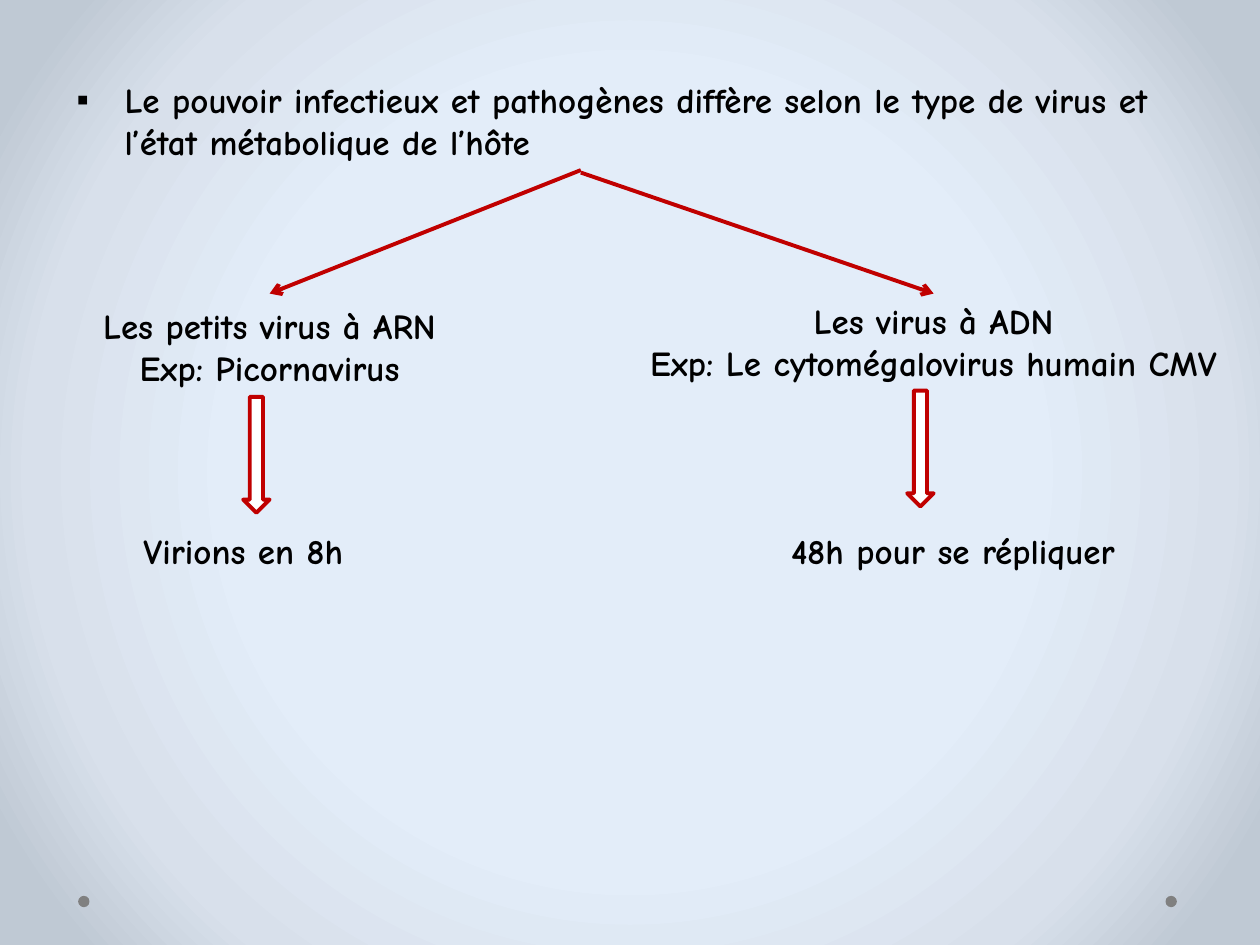
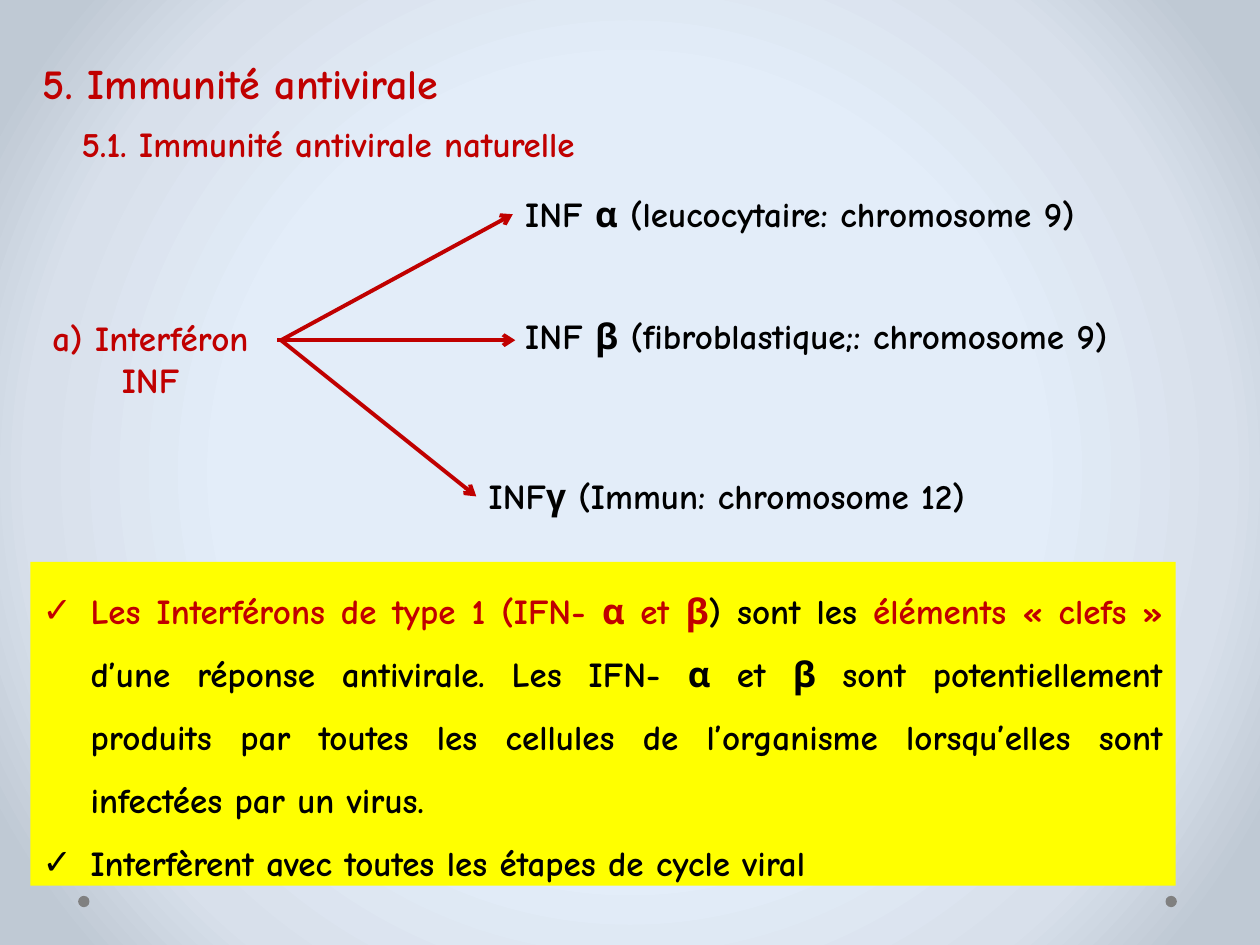
import dataclasses

import lxml.etree
import pptx
import pptx.dml.color
import pptx.enum.shapes
import pptx.enum.text
import pptx.oxml
import pptx.oxml.ns
import pptx.util

Inches = pptx.util.Inches
Pt = pptx.util.Pt
SHAPE = pptx.enum.shapes.MSO_SHAPE
ALIGN = pptx.enum.text.PP_ALIGN
ANCHOR = pptx.enum.text.MSO_ANCHOR
qn = pptx.oxml.ns.qn


@dataclasses.dataclass(frozen=True)
class Theme:
    font: str = "Comic Neue"
    head: int = 24
    body: int = 20
    line: float = 2.25
    red: str = "C00000"
    black: str = "000000"
    white: str = "FFFFFF"
    yellow: str = "FFFF00"
    grey: str = "808080"
    glow: tuple = ((50, "E3EDF9"), (76, "D8E0EB"), (92, "BFC9D4"))


THEME = Theme()


def rgb(code):
    return pptx.dml.color.RGBColor.from_string(code)


def paint_back(master):
    """Give the master a round gradient that spreads from the centre."""
    master.background.fill.gradient()
    grad = master.element.xpath("./p:cSld/p:bg//a:gradFill")[0]
    stops = "".join(
        f'<a:gs pos="{pos * 1000}"><a:srgbClr val="{code}"/></a:gs>'
        for pos, code in THEME.glow
    )
    new = pptx.oxml.parse_xml(
        f'<a:gradFill xmlns:a="{pptx.oxml.ns.namespaces("a")["a"]}" rotWithShape="1">'
        f'<a:gsLst>{stops}</a:gsLst><a:path path="circle">'
        '<a:fillToRect l="50000" t="50000" r="50000" b="50000"/>'
        "</a:path></a:gradFill>"
    )
    grad.getparent().replace(grad, new)


def add_form(slide, kind, box, fill, edge=None):
    form = slide.shapes.add_shape(kind, *map(Inches, box))
    form.shadow.inherit = False
    form.fill.solid()
    form.fill.fore_color.rgb = rgb(fill)
    if edge:
        form.line.color.rgb = rgb(edge)
        form.line.width = Pt(THEME.line)
    else:
        form.line.fill.background()
    return form


def new_slide(deck, layout):
    slide = deck.slides.add_slide(deck.slide_layouts.get_by_name(layout))
    for left in (9.25, 0.62):
        add_form(slide, SHAPE.OVAL, (left, 7.11, 0.09, 0.09), THEME.grey)
    return slide


def set_bullet(para, mark):
    props = para._p.get_or_add_pPr()
    props.set("marL", str(Inches(0.38)))
    props.set("indent", str(-Inches(0.38)))
    font = lxml.etree.SubElement(props, qn("a:buFont"))
    font.set("typeface", "Arial")
    lxml.etree.SubElement(props, qn("a:buChar")).set("char", mark)


def fill_text(frame, paras, color, size=THEME.body, align=ALIGN.LEFT,
              bullet=None, space=None, wrap=False):
    """Write paragraphs; each is a string or a list of (text, colour) runs."""
    frame.word_wrap = wrap
    frame.vertical_anchor = ANCHOR.TOP
    for index, item in enumerate(paras):
        para = frame.add_paragraph() if index else frame.paragraphs[0]
        para.alignment = align
        if space:
            para.line_spacing = space
        if bullet:
            set_bullet(para, bullet)
        para.font.name = THEME.font
        para.font.size = Pt(size)
        para.font.bold = True
        para.font.color.rgb = rgb(color)
        if isinstance(item, str):
            para.add_run().text = item
            continue
        for text, tint in item:
            run = para.add_run()
            run.text = text
            run.font.color.rgb = rgb(tint)


def add_text(slide, box, *paras, color=THEME.black, **style):
    label = slide.shapes.add_textbox(*map(Inches, box))
    fill_text(label.text_frame, paras, color, **style)


def set_title(slide, box, text):
    title = slide.shapes.title
    title.left, title.top, title.width, title.height = map(Inches, box)
    title.text_frame.auto_size = pptx.enum.text.MSO_AUTO_SIZE.NONE
    fill_text(title.text_frame, [text], THEME.red, size=THEME.head)


def add_arrow(slide, start, end):
    arrow = slide.shapes.add_connector(
        pptx.enum.shapes.MSO_CONNECTOR.STRAIGHT, *map(Inches, start + end))
    arrow.line.color.rgb = rgb(THEME.red)
    arrow.line.width = Pt(THEME.line)
    line = arrow.line._get_or_add_ln()
    lxml.etree.SubElement(line, qn("a:tailEnd")).set("type", "arrow")
    lxml.etree.SubElement(arrow._element.spPr, qn("a:effectLst"))


def build_power(deck):
    slide = new_slide(deck, "Blank")
    add_text(slide, (0.51, 0.57, 9.21, 0.77),
             "Le pouvoir infectieux et pathogènes diffère selon le type de virus "
             "et l’état métabolique de l’hôte", bullet="▪", wrap=True)
    add_arrow(slide, (4.61, 1.35), (2.14, 2.33))
    add_arrow(slide, (4.61, 1.37), (7.41, 2.33))
    add_text(slide, (0.48, 2.37, 3.32, 0.77), "Les petits virus à ARN",
             "Exp: Picornavirus", align=ALIGN.CENTER)
    add_text(slide, (4.79, 2.33, 5.24, 0.77), "Les virus à ADN",
             "Exp: Le cytomégalovirus humain CMV", align=ALIGN.CENTER)
    for left, top in ((1.93, 3.15), (7.2, 3.1)):
        add_form(slide, SHAPE.DOWN_ARROW, (left, top, 0.21, 0.92),
                 THEME.white, THEME.red)
    add_text(slide, (1.04, 4.15, 1.99, 0.44), "Virions en 8h")
    add_text(slide, (6.18, 4.15, 3.12, 0.44), "48h pour se répliquer")


def build_immune(deck):
    slide = new_slide(deck, "Title Only")
    red, black = THEME.red, THEME.black
    set_title(slide, (0.24, 0.41, 3.85, 0.5), "5. Immunité antivirale")
    add_text(slide, (0.55, 0.92, 4.83, 0.44),
             "5.1. Immunité antivirale naturelle", color=red)
    add_text(slide, (0.18, 2.46, 2.03, 0.77), "a) Interféron", "INF",
             color=red, align=ALIGN.CENTER)
    kinds = (
        (2.23, (4.07, 1.7), (4.07, 1.48, 5.13), "INF α (leucocytaire: chromosome 9)"),
        (2.2, (4.09, 2.7), (4.07, 2.45, 5.48), "INF β (fibroblastique;: chromosome 9)"),
        (2.23, (3.78, 3.94), (3.78, 3.72, 4.54), "INFγ (Immun: chromosome 12)"),
    )
    for start, end, place, text in kinds:
        add_arrow(slide, (start, 2.7), end)
        add_text(slide, place + (0.44,), text)
    panel = add_form(slide, SHAPE.RECTANGLE, (0.24, 4.46, 9.09, 2.57), THEME.yellow)
    role = [
        ("Les Interférons de type 1 (IFN- α et β", red),
        (") sont les ", black),
        ("éléments « clefs » ", red),
        ("d’une réponse antivirale. Les IFN- α et β sont potentiellement "
         "produits par toutes les cellules de l’organisme lorsqu’elles sont "
         "infectées par un virus.", black),
    ]
    fill_text(panel.text_frame,
              [role, "Interfèrent avec toutes les étapes de cycle viral"],
              black, align=ALIGN.JUSTIFY, bullet="✓", space=1.5, wrap=True)


def main():
    deck = pptx.Presentation()
    deck.slide_width, deck.slide_height = Inches(10), Inches(7.5)
    paint_back(deck.slide_master)
    build_power(deck)
    build_immune(deck)
    deck.save("out.pptx")


if __name__ == "__main__":
    main()
